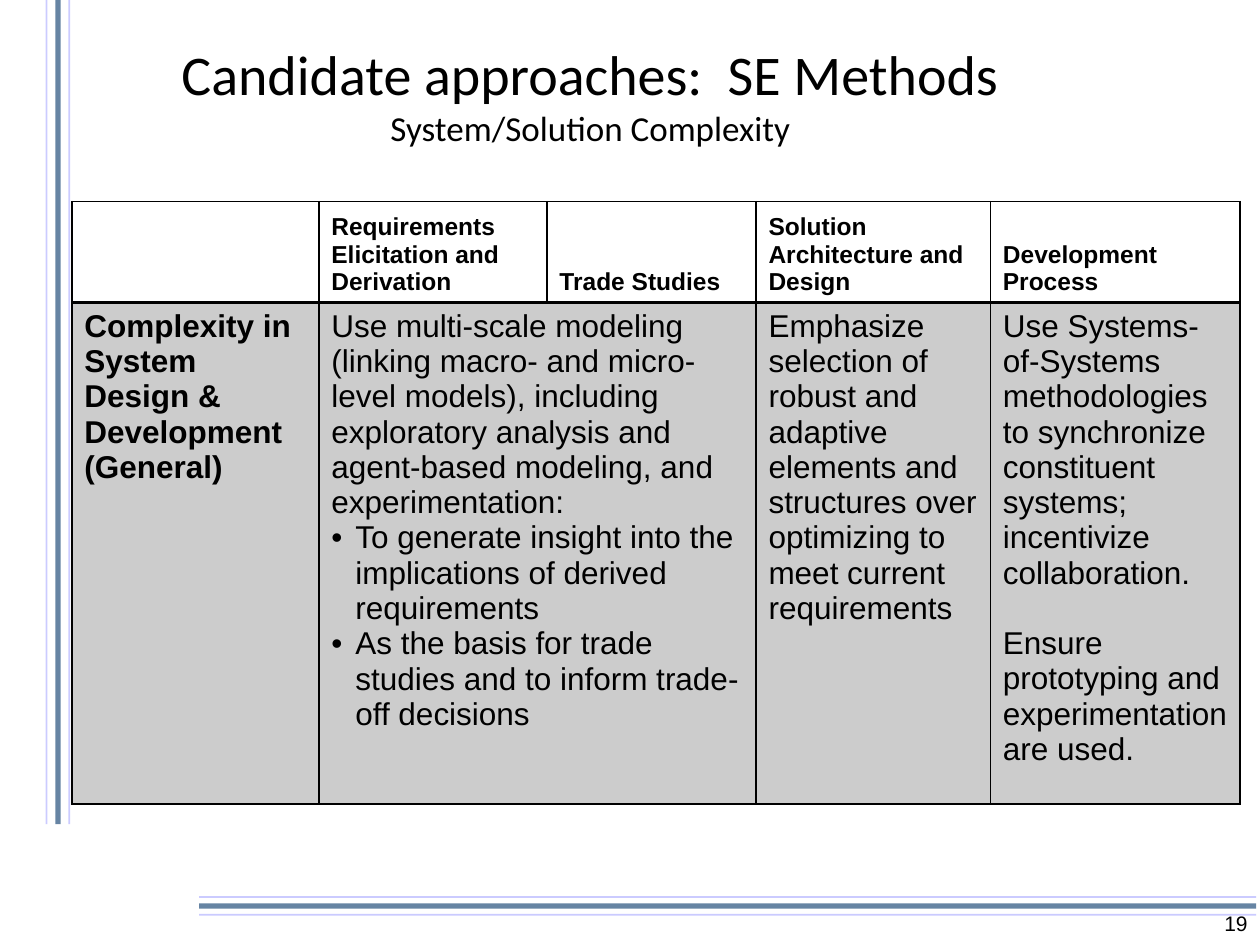
from lxml.etree import SubElement
from pptx import Presentation
from pptx.dml.color import RGBColor
from pptx.enum.shapes import MSO_CONNECTOR
from pptx.enum.text import MSO_ANCHOR, MSO_AUTO_SIZE, PP_ALIGN
from pptx.oxml.ns import qn
from pptx.util import Inches, Pt

BLACK = RGBColor(0, 0, 0)
LILAC = RGBColor(0x99, 0x99, 0xFF)
NAVY = RGBColor(0x00, 0x33, 0x66)

# Light, heavy, light: colour, width in points, opacity in percent
RULES = [(LILAC, 1, 50), (NAVY, 3, 60), (LILAC, 1, 50)]
COLUMNS = [1.96, 1.81, 1.66, 1.86, 1.98]
ROWS = [0.76, 3.74]
HEADERS = ["", "Requirements Elicitation and Derivation", "Trade Studies",
           "Solution Architecture and Design", "Development Process"]
LABEL = "Complexity in System Design & Development (General)"
MODELING = ("Use multi-scale modeling (linking macro- and micro-level models), including "
            "exploratory analysis and agent-based modeling, and experimentation:")
MODELING_AIMS = ["To generate insight into the implications of derived requirements",
                 "As the basis for trade studies and to inform trade-off decisions"]
ARCHITECTURE = ("Emphasize selection of robust and adaptive elements and structures over "
                "optimizing to meet current requirements")
PROCESS = ["Use Systems-of-Systems methodologies to synchronize constituent systems; "
           "incentivize collaboration.",
           "Ensure prototyping and experimentation are used."]


def set_opacity(element, percent):
    color = next(element.iter(qn("a:srgbClr")))
    SubElement(color, qn("a:alpha"), val=str(percent * 1000))


def add_run(p, text, size, font="Arial", bold=False):
    r = p.add_run()
    r.text = text
    r.font.size, r.font.name, r.font.bold = Pt(size), font, bold
    r.font.color.rgb = BLACK


def add_rules(s, left, top, width, height, vertical):
    """Three parallel rules spread evenly over the box."""
    for i, (color, weight, opacity) in enumerate(RULES):
        if vertical:
            x = left + width * i / 2
            ends = x, top, x, top + height
        else:
            y = top + height * i / 2
            ends = left + width, y, left, y
        line = s.shapes.add_connector(MSO_CONNECTOR.STRAIGHT, *map(Inches, ends))
        line.line.color.rgb = color
        line.line.width = Pt(weight)
        set_opacity(line.line._get_or_add_ln(), opacity)
        SubElement(line._element.spPr, qn("a:effectLst"))


def add_title(s, *box):
    title = s.shapes.title
    title.left, title.top, title.width, title.height = map(Inches, box)
    tf = title.text_frame
    tf.auto_size = MSO_AUTO_SIZE.NONE
    tf.vertical_anchor = MSO_ANCHOR.MIDDLE
    p = tf.paragraphs[0]
    p.alignment = PP_ALIGN.CENTER
    add_run(p, "Candidate approaches:  SE Methods", 32, "Calibri")
    p.add_line_break()
    add_run(p, "System/Solution Complexity", 20, "Calibri")


def add_page_number(s, *box):
    tf = s.shapes.add_textbox(*map(Inches, box)).text_frame
    tf.word_wrap = True
    p = tf.paragraphs[0]
    p.alignment = PP_ALIGN.RIGHT
    add_run(p, "19", 12)


def set_borders(cell, **points):
    """Border weights by side, in the order L, R, T, B."""
    tc_pr = cell._tc.get_or_add_tcPr()
    for side, weight in points.items():
        ln = SubElement(tc_pr, qn(f"a:ln{side}"), w=str(Pt(weight)))
        fill = SubElement(ln, qn("a:solidFill"))
        SubElement(fill, qn("a:srgbClr"), val=str(BLACK))


def add_bullet(p):
    p_pr = p._p.get_or_add_pPr()
    p_pr.set("marL", str(Inches(0.19)))
    p_pr.set("indent", str(-Inches(0.19)))
    SubElement(p_pr, qn("a:buFont"), typeface="Arial")
    SubElement(p_pr, qn("a:buChar"), char="•")


def fill_body_cell(cell, texts, bold=False, bullets=False, gap=0):
    """First text plain; later ones bulleted or set apart by a gap."""
    tf = cell.text_frame
    for i, text in enumerate(texts):
        p = tf.add_paragraph() if i else tf.paragraphs[0]
        if i and gap:
            p.space_before = Pt(gap)
        if i and bullets:
            add_bullet(p)
        add_run(p, text, 18, bold=bold)


def add_methods_table(s, left, top):
    box = left, top, sum(COLUMNS), sum(ROWS)
    table = s.shapes.add_table(len(ROWS), len(COLUMNS), *map(Inches, box)).table
    table.first_row = table.horz_banding = False
    for column, width in zip(table.columns, COLUMNS):
        column.width = Inches(width)
    for row, height in zip(table.rows, ROWS):
        row.height = Inches(height)

    # Header row
    for cell, text in zip(table.rows[0].cells, HEADERS):
        cell.vertical_anchor = MSO_ANCHOR.BOTTOM
        set_borders(cell, L=1, R=1, T=1, B=2)
        cell.fill.background()
        if text:
            add_run(cell.text_frame.paragraphs[0], text, 14, bold=True)

    # Shaded body row
    for cell in table.rows[1].cells:
        set_borders(cell, L=1, R=1, T=2, B=1)
        cell.fill.solid()
        cell.fill.fore_color.rgb = BLACK
        set_opacity(cell._tc.tcPr.find(qn("a:solidFill")), 20)
    table.cell(1, 1).merge(table.cell(1, 2))
    fill_body_cell(table.cell(1, 0), [LABEL], bold=True)
    fill_body_cell(table.cell(1, 1), [MODELING, *MODELING_AIMS], bullets=True)
    fill_body_cell(table.cell(1, 3), [ARCHITECTURE])
    fill_body_cell(table.cell(1, 4), PROCESS, gap=20)


def main():
    prs = Presentation()
    prs.slide_width, prs.slide_height = Inches(10), Inches(7.5)
    s = prs.slides.add_slide(prs.slide_layouts[5])
    add_rules(s, 0.37, 0, 0.18, 6.54, vertical=True)
    add_rules(s, 1.58, 7.12, 8.39, 0.14, vertical=False)
    add_page_number(s, 7.92, 7.18, 2.08, 0.32)
    add_methods_table(s, 0.57, 1.6)
    add_title(s, 0.54, 0.12, 8.29, 1.25)
    prs.save("out.pptx")


if __name__ == "__main__":
    main()
